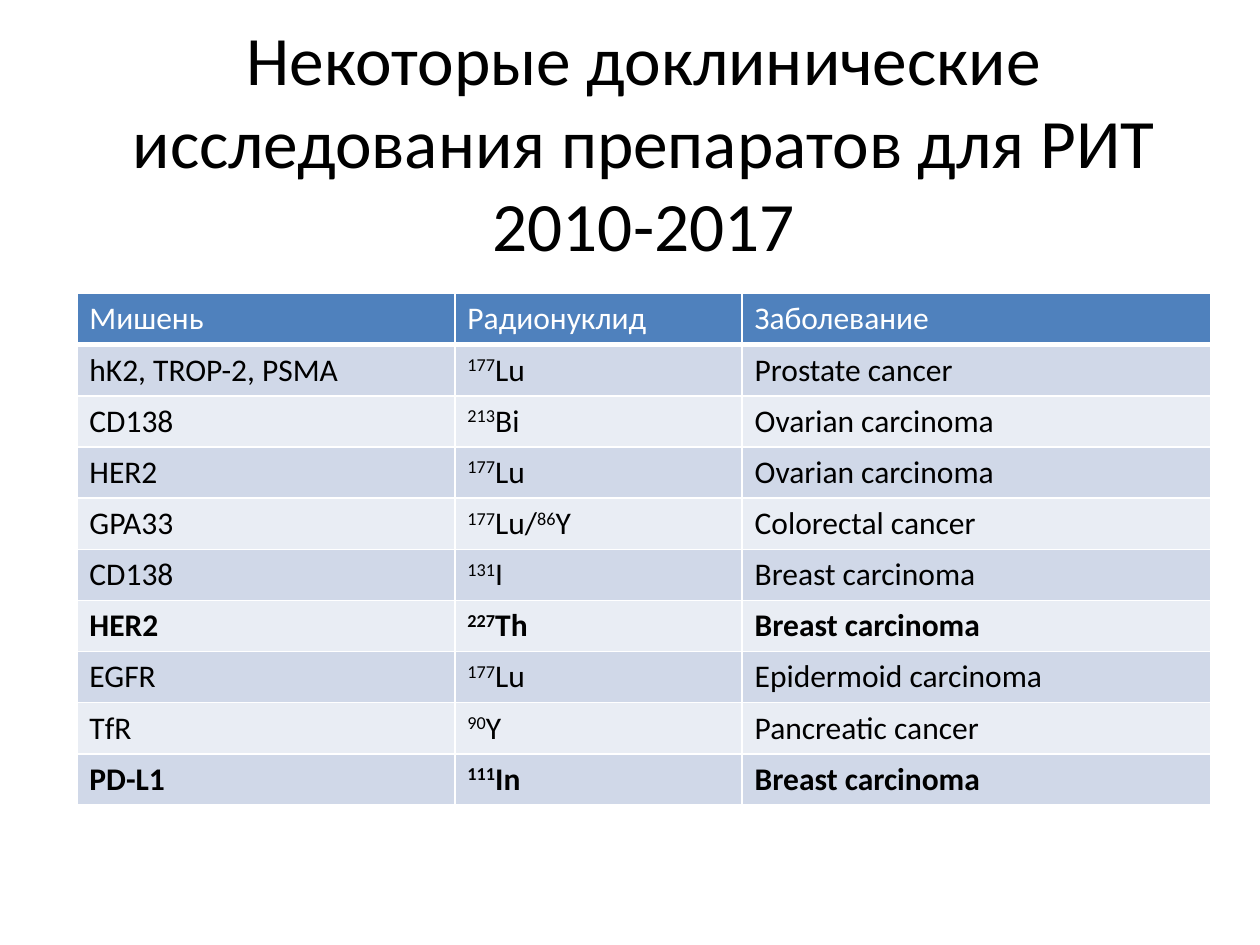
from dataclasses import dataclass

from lxml.etree import SubElement
from pptx import Presentation
from pptx.dml.color import RGBColor
from pptx.enum.text import MSO_ANCHOR, PP_ALIGN
from pptx.oxml.ns import qn
from pptx.util import Inches, Pt


@dataclass
class Study:
    target: str
    nuclide: str
    disease: str
    bold: bool = False


TITLE = "Некоторые доклинические исследования препаратов для РИТ 2010-2017"
HEADER = Study("Мишень", "Радионуклид", "Заболевание")
STUDIES = [
    Study("hK2, TROP-2, PSMA", "^177^Lu", "Prostate cancer"),
    Study("CD138", "^213^Bi", "Ovarian carcinoma"),
    Study("HER2", "^177^Lu", "Ovarian carcinoma"),
    Study("GPA33", "^177^Lu/^86^Y", "Colorectal cancer"),
    Study("CD138", "^131^I", "Breast carcinoma"),
    Study("HER2", "^227^Th", "Breast carcinoma", bold=True),
    Study("EGFR", "^177^Lu", "Epidermoid carcinoma"),
    Study("TfR", "^90^Y", "Pancreatic cancer"),
    Study("PD-L1", "^111^In", "Breast carcinoma", bold=True),
]
COLUMN_WIDTHS = [3, 2.28, 3.72]
BANDS = ["D0D8E8", "E9EDF4"]


def rgb(value: str) -> RGBColor:
    return RGBColor.from_string(value)


def write(tf, text: str, *, size: float, color: str = "000000",
          bold: bool = False, align=PP_ALIGN.LEFT) -> None:
    p = tf.paragraphs[0]
    p.alignment = align
    for i, part in enumerate(text.split("^")):
        if not part:
            continue
        r = p.add_run()
        r.text = part
        r.font.name = "Calibri"
        r.font.size = Pt(size)
        r.font.bold = bold
        r.font.color.rgb = rgb(color)
        if i % 2:
            r.font._element.set("baseline", "30000")


def set_borders(cell, color: str, bottom: float) -> None:
    tc_pr = cell._tc.get_or_add_tcPr()
    for side, width in {"L": 1, "R": 1, "T": 1, "B": bottom}.items():
        ln = SubElement(tc_pr, qn(f"a:ln{side}"), w=str(Pt(width)))
        fill = SubElement(ln, qn("a:solidFill"))
        SubElement(fill, qn("a:srgbClr"), val=color)


def fill_row(cells, study: Study, *, fill: str, color: str = "000000",
             bottom: float = 1) -> None:
    for cell, text in zip(cells, (study.target, study.nuclide, study.disease)):
        set_borders(cell, "FFFFFF", bottom)
        cell.fill.solid()
        cell.fill.fore_color.rgb = rgb(fill)
        write(cell.text_frame, text, size=18, color=color, bold=study.bold)


def add_title(s) -> None:
    tf = s.shapes.add_textbox(Inches(0.5), Inches(0.49), Inches(9.22), Inches(1.25)).text_frame
    tf.word_wrap = True
    tf.vertical_anchor = MSO_ANCHOR.MIDDLE
    write(tf, TITLE, size=39.6, align=PP_ALIGN.CENTER)


def add_studies(s) -> None:
    table = s.shapes.add_table(len(STUDIES) + 1, len(COLUMN_WIDTHS), Inches(0.61),
                               Inches(2.33), Inches(9), Inches(4.06)).table
    for column, width in zip(table.columns, COLUMN_WIDTHS):
        column.width = Inches(width)
    fill_row(table.rows[0].cells, HEADER, fill="4F81BD", color="FFFFFF", bottom=3)
    for i, study in enumerate(STUDIES):
        fill_row(table.rows[i + 1].cells, study, fill=BANDS[i % 2])


def main() -> None:
    prs = Presentation()
    prs.slide_width, prs.slide_height = Inches(10), Inches(7.5)
    s = prs.slides.add_slide(prs.slide_layouts[6])
    add_title(s)
    add_studies(s)
    prs.save("out.pptx")


if __name__ == "__main__":
    main()
